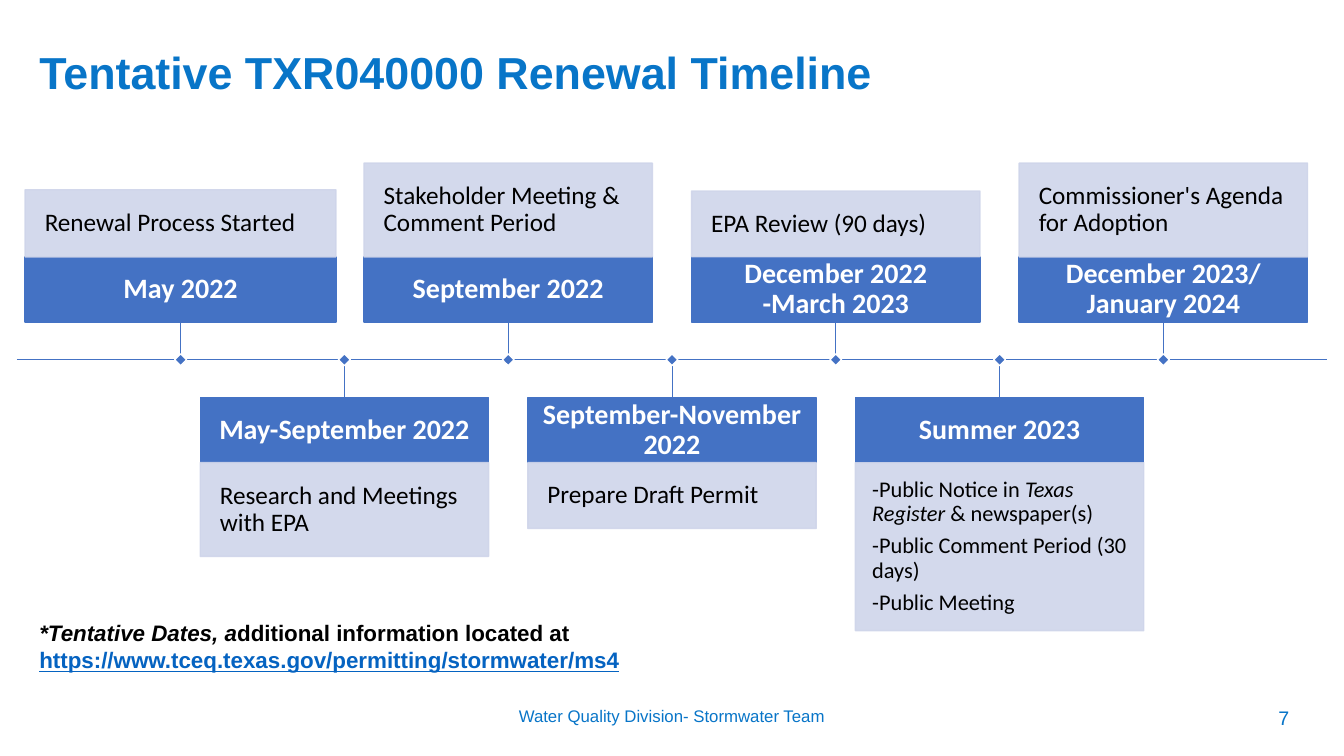
from pptx import Presentation
from pptx.dml.color import RGBColor
from pptx.enum.shapes import MSO_CONNECTOR, MSO_SHAPE
from pptx.enum.text import MSO_ANCHOR as Anchor, PP_ALIGN as Align
from pptx.oxml.ns import qn
from pptx.util import Pt
from lxml.etree import SubElement

BLUE = RGBColor(0x44, 0x72, 0xC4)
PALE = RGBColor(0xCF, 0xD5, 0xEA)
HEADING = RGBColor(0x08, 0x75, 0xC8)
LINK = RGBColor(0x05, 0x63, 0xC1)
WHITE = RGBColor(0xFF, 0xFF, 0xFF)
BLACK = RGBColor(0, 0, 0)

# Timeline geometry in points
AXIS_Y, STEM, DATE_HEIGHT = 257, 27, 46.5
FIRST_X, STEP = 129, 117
SHORT, TALL = 47, 67

# Date, description paragraphs, description height, width
MILESTONES = [
    ("May 2022", ["Renewal Process Started"], 48, 222),
    ("May-September 2022", ["Research and Meetings with EPA"], TALL, 206),
    ("September 2022", ["Stakeholder Meeting & Comment Period"], TALL, 206),
    ("September-November 2022", ["Prepare Draft Permit"], SHORT, 206),
    ("December 2022 -March 2023", ["EPA Review (90 days)"], SHORT, 206),
    ("Summer 2023",
     [[("-Public Notice in ", {}), ("Texas Register", {"italic": True}),
       (" & newspaper(s)", {})],
      "-Public Comment Period (30 days)", "-Public Meeting"], 120, 206),
    ("December 2023/ January 2024", ["Commissioner's Agenda for Adoption"],
     TALL, 206),
]


class TimelineSlide:
    def __init__(self, slide):
        self.shapes = slide.shapes

    def fill_text(self, frame, paragraphs, font, size, color, bold=False,
                  align=Align.LEFT, spacing=1.0, after=0):
        """Fill a frame; a paragraph is a string or a list of (text, style)."""
        frame.word_wrap = True
        for index, content in enumerate(paragraphs):
            paragraph = frame.paragraphs[0] if index == 0 else frame.add_paragraph()
            paragraph.alignment = align
            paragraph.line_spacing = spacing
            paragraph.space_after = Pt(after)
            pieces = [(content, {})] if isinstance(content, str) else content
            for text, style in pieces:
                run = paragraph.add_run()
                run.text = text
                run.font.name, run.font.size = font, Pt(size)
                run.font.bold = bold
                run.font.italic = style.get("italic", False)
                run.font.underline = style.get("underline", False)
                run.font.color.rgb = style.get("color", color)

    def label(self, left, top, width, height, content, size, color,
              anchor=Anchor.TOP, **style):
        box = self.shapes.add_textbox(Pt(left), Pt(top), Pt(width), Pt(height))
        box.text_frame.vertical_anchor = anchor
        self.fill_text(box.text_frame, [content], "Arial", size, color, **style)

    def block(self, left, top, width, height, fill, outline, weight=1, alpha=None):
        block = self.shapes.add_shape(MSO_SHAPE.RECTANGLE, Pt(left), Pt(top),
                                      Pt(width), Pt(height))
        block.shadow.inherit = False
        block.fill.solid()
        block.fill.fore_color.rgb = fill
        block.line.color.rgb = outline
        block.line.width = Pt(weight)
        if alpha:
            for color in block.element.spPr.iter(qn("a:srgbClr")):
                SubElement(color, qn("a:alpha")).set("val", str(alpha * 1000))
        return block

    def card(self, left, top, width, height, fill, paragraphs, size, color,
             inset, alpha=None, **style):
        card = self.block(left, top, width, height, fill, fill, alpha=alpha)
        frame = card.text_frame
        frame.margin_left = frame.margin_right = Pt(inset)
        frame.margin_top = frame.margin_bottom = Pt(inset)
        frame.vertical_anchor = Anchor.MIDDLE
        self.fill_text(frame, paragraphs, "Calibri", size, color, spacing=0.9,
                       after=0.35 * size, **style)
        return card

    def line(self, x1, y1, x2, y2, weight):
        line = self.shapes.add_connector(MSO_CONNECTOR.STRAIGHT, Pt(x1), Pt(y1),
                                         Pt(x2), Pt(y2))
        line.line.color.rgb = BLUE
        line.line.width = Pt(weight)
        SubElement(line.element.spPr, qn("a:effectLst"))
        return line

    def marker(self, x):
        side = 6
        marker = self.block(x - side / 2, AXIS_Y - side / 2, side, side, BLUE, WHITE)
        marker.rotation = 45

    def milestone(self, x, above, date, details, detail_height, width):
        left = x - width / 2
        if above:
            date_top = AXIS_Y - STEM - DATE_HEIGHT
            detail_top = date_top - detail_height
        else:
            date_top = AXIS_Y + STEM
            detail_top = date_top + DATE_HEIGHT
        date_card = self.card(left, date_top, width, DATE_HEIGHT, BLUE, [date],
                              20, WHITE, 8, bold=True, align=Align.CENTER)
        size, inset = (18, 14) if len(details) == 1 else (16, 12)
        self.card(left, detail_top, width, detail_height, PALE, details, size,
                  BLACK, inset, alpha=90)
        if above:
            stem = self.line(x, AXIS_Y - STEM, x, AXIS_Y, 0.5)
            stem.begin_connect(date_card, 2)
        else:
            stem = self.line(x, AXIS_Y, x, AXIS_Y + STEM, 0.5)
            stem.end_connect(date_card, 0)
        self.marker(x)


def main():
    deck = Presentation()
    deck.slide_width, deck.slide_height = Pt(960), Pt(540)
    page = TimelineSlide(deck.slides.add_slide(deck.slide_layouts[6]))

    # Title
    page.label(21, 29, 895, 49, "Tentative TXR040000 Renewal Timeline", 32,
               HEADING, Anchor.MIDDLE, bold=True, spacing=0.9)

    # Timeline, alternating above and below the axis
    page.line(12, AXIS_Y, 948, AXIS_Y, 1)
    for index, entry in enumerate(MILESTONES):
        page.milestone(FIRST_X + index * STEP, index % 2 == 0, *entry)

    # Note on dates
    note = [("*Tentative Dates, a", {"italic": True}),
            ("dditional information located at ", {}),
            ("https://www.tceq.texas.gov/permitting/stormwater/ms4",
             {"color": LINK, "underline": True})]
    page.label(21, 439, 596, 46, note, 16, BLACK, bold=True)

    # Footer and page number
    page.label(318, 500.5, 324, 29, "Water Quality Division- Stormwater Team", 12,
               HEADING, align=Align.CENTER)
    page.label(885, 500.5, 64, 29, "7", 14, HEADING, align=Align.CENTER)

    deck.save("out.pptx")


if __name__ == "__main__":
    main()
